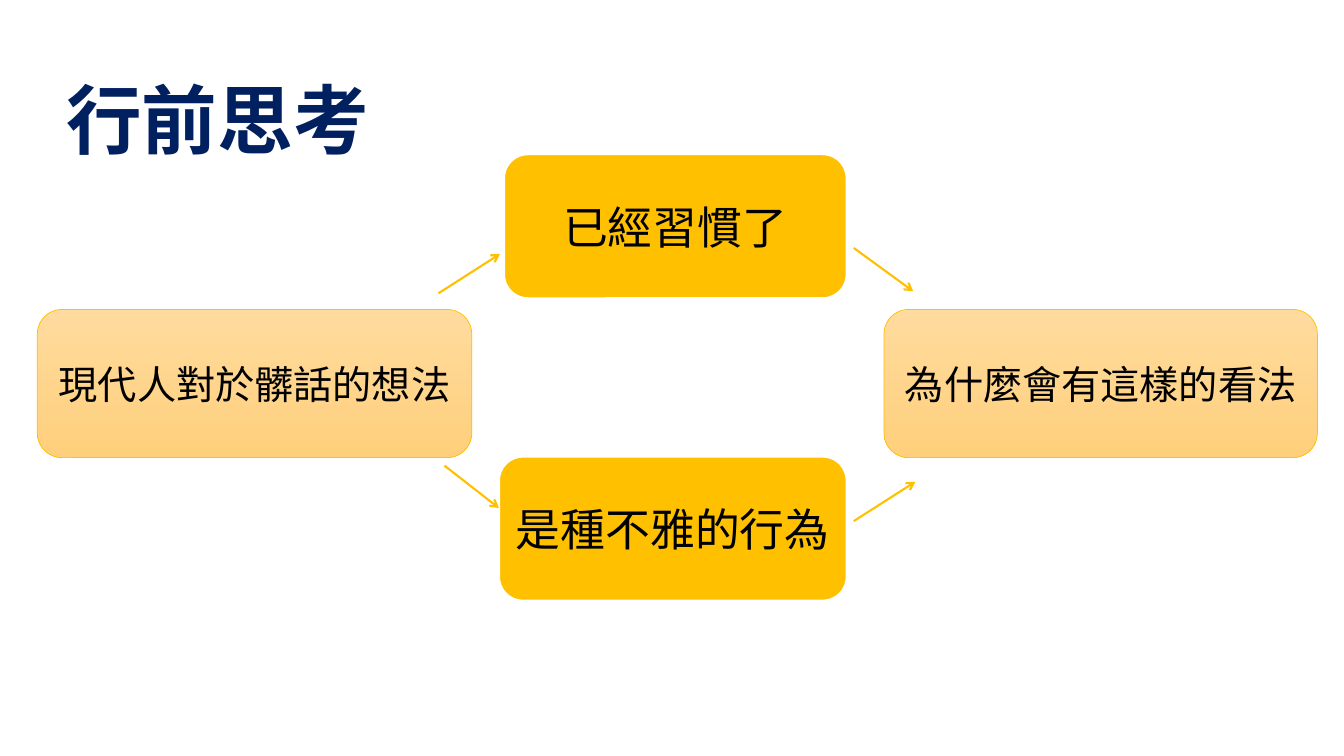
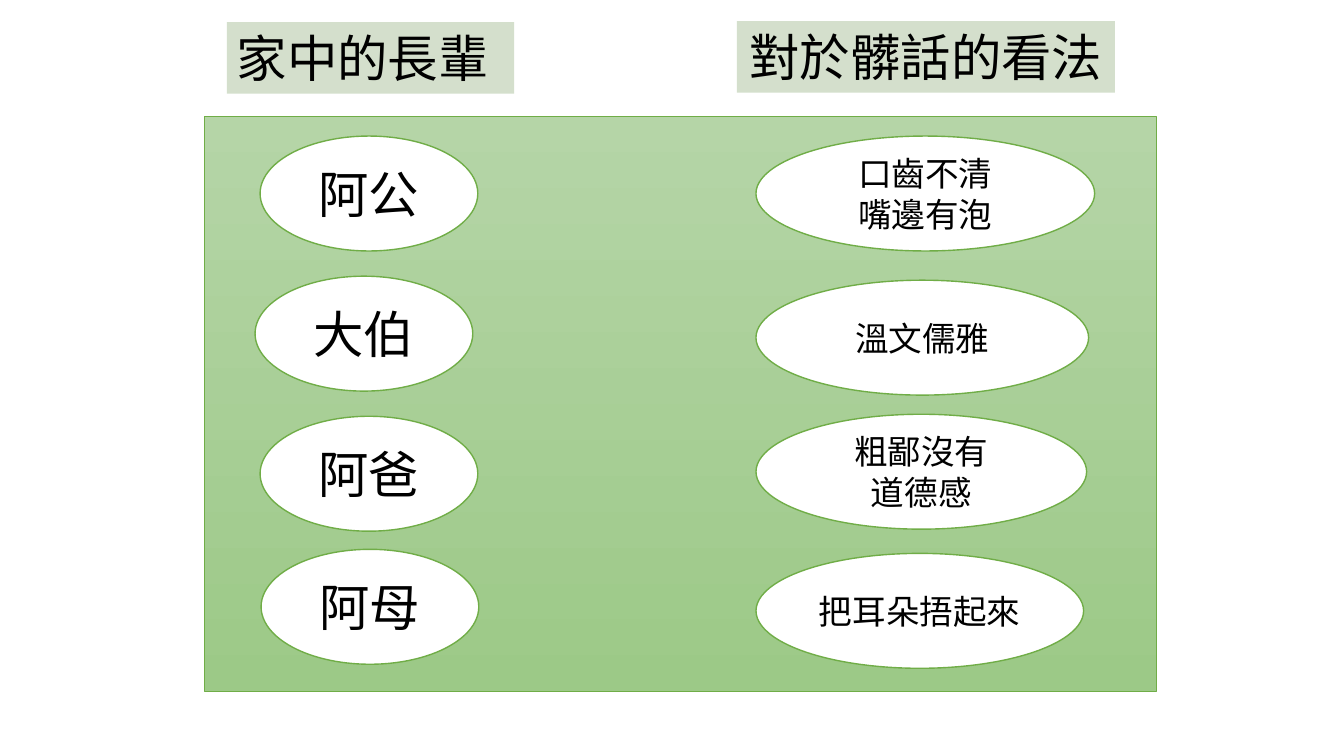
from lxml.etree import SubElement
from pptx import Presentation
from pptx.dml.color import RGBColor
from pptx.enum.shapes import MSO_CONNECTOR, MSO_SHAPE
from pptx.enum.text import MSO_ANCHOR, PP_ALIGN
from pptx.oxml.ns import qn
from pptx.util import Inches, Pt

# Slide size and a grid of 40 columns by 30 rows
WIDE, HIGH = Inches(13.33), Inches(7.5)
COL, ROW = WIDE / 40, HIGH / 30

FONT = "Noto Sans CJK SC"
INK = {
    "navy": "002060", "black": "000000", "white": "FFFFFF",
    "gold": "FFC000", "peach": "FFDB9E", "sand": "FFD07C",
    "green": "70AD47", "mint": "B5D5A7", "leaf": "9CC987", "moss": "548235",
}

# Text formats
TEXT = {
    "title": {"size": Pt(54), "bold": True},
    "head": {"size": Pt(36)},
    "idea": {"size": Pt(32)},
    "view": {"size": Pt(28)},
    "note": {"size": Pt(24)},
}

# Shape looks: fill (one colour or two for a gradient), line, line width
LOOK = {
    "idea": ("gold", "white", 1.5),
    "view": (("peach", "sand"), "gold", 0.5),
    "panel": (("mint", "leaf"), "green", 0.5),
    "oval": ("white", "green", 1),
    "label": ("moss", None, 0),
}


def tone(name):
    return RGBColor.from_string(INK[name])


def place(x, y, w, h):
    return [round(n) for n in (x * COL, y * ROW, w * COL, h * ROW)]


def write(shape, words, kind, ink="black", left=False, top=False):
    frame = shape.text_frame
    frame.word_wrap = left
    frame.vertical_anchor = MSO_ANCHOR.TOP if top else MSO_ANCHOR.MIDDLE
    frame.text = words
    for para in frame.paragraphs:
        para.alignment = PP_ALIGN.LEFT if left else PP_ALIGN.CENTER
        for run in para.runs:
            font = run.font
            for key, value in {"name": FONT, **TEXT[kind]}.items():
                setattr(font, key, value)
            font.color.rgb = tone(ink)
            # East Asian typeface
            SubElement(run._r.get_or_add_rPr(), qn("a:ea"), typeface=FONT)


def draw(slide, form, look, box):
    shape = slide.shapes.add_shape(form, *place(*box))
    shape.shadow.inherit = False
    paint, edge, width = LOOK[look]
    if isinstance(paint, tuple):
        shape.fill.gradient()
        shape.fill.gradient_angle = 270
        for stop, name in zip(shape.fill.gradient_stops, paint):
            stop.color.rgb = tone(name)
    else:
        shape.fill.solid()
        shape.fill.fore_color.rgb = tone(paint)
    if edge:
        shape.line.color.rgb = tone(edge)
        shape.line.width = Pt(width)
    else:
        shape.line.fill.background()
    return shape


def card(slide, words, look, box):
    write(draw(slide, MSO_SHAPE.ROUNDED_RECTANGLE, look, box), words, look)


def oval(slide, words, kind, box):
    write(draw(slide, MSO_SHAPE.OVAL, "oval", box), words, kind)


def label(slide, words, box, left=False):
    shape = draw(slide, MSO_SHAPE.RECTANGLE, "label", box)
    tint = shape._element.spPr.find(qn("a:solidFill"))[0]
    SubElement(tint, qn("a:alpha"), val="25000")
    write(shape, words, "head", left=left, top=True)


def arrow(slide, ends):
    line = slide.shapes.add_connector(MSO_CONNECTOR.STRAIGHT, *place(*ends))
    line.line.color.rgb = tone("gold")
    line.line.width = Pt(1.5)
    SubElement(line.line._get_or_add_ln(), qn("a:tailEnd"), type="arrow")
    SubElement(line._element.spPr, qn("a:effectLst"))


def think(slide):
    # Title
    title = slide.shapes.add_textbox(*place(1.68, 2.68, 10.77, 4.04))
    write(title, "行前思考", "title", "navy", left=True, top=True)

    # Views at the sides, ideas between them
    for words, look, box in (
        ("現代人對於髒話的想法", "view", (1.11, 12.28, 12.93, 5.88)),
        ("已經習慣了", "idea", (15, 6.12, 10.2, 5.72)),
        ("是種不雅的行為", "idea", (14.85, 18.12, 10.35, 5.72)),
        ("為什麼會有這樣的看法", "view", (26.31, 12.28, 12.9, 5.88)),
    ):
        card(slide, words, look, box)

    # Arrows from left to right
    for ends in (
        (13.05, 11.64, 14.88, 10.08),
        (13.23, 18.48, 14.85, 20.16),
        (25.41, 9.84, 27.18, 11.56),
        (25.41, 20.68, 27.24, 19.12),
    ):
        arrow(slide, ends)


def elders(slide):
    # Panel
    draw(slide, MSO_SHAPE.RECTANGLE, "panel", (6.09, 4.6, 28.32, 22.84))

    # Family members: left edge, top
    for words, x, y in (
        ("阿公", 7.74, 5.4), ("大伯", 7.59, 10.96),
        ("阿爸", 7.74, 16.52), ("阿母", 7.77, 21.8),
    ):
        oval(slide, words, "head", (x, y, 6.48, 4.56))

    # Their views: top, width
    for words, y, w in (
        ("口齒不清\n嘴邊有泡", 5.4, 10.08), ("溫文儒雅", 11.12, 9.9),
        ("粗鄙沒有\n道德感", 16.44, 9.84), ("把耳朵捂起來", 21.96, 9.75),
    ):
        oval(slide, words, "note", (22.5, y, w, 4.56))

    # Column labels
    label(slide, "對於髒話的看法", (21.93, 0.84, 11.25, 2.84))
    label(slide, "家中的長輩", (6.75, 0.88, 8.55, 2.84), left=True)


def main():
    deck = Presentation()
    deck.slide_width, deck.slide_height = WIDE, HIGH
    for build in (think, elders):
        build(deck.slides.add_slide(deck.slide_layouts[6]))
    deck.save("out.pptx")


if __name__ == "__main__":
    main()
